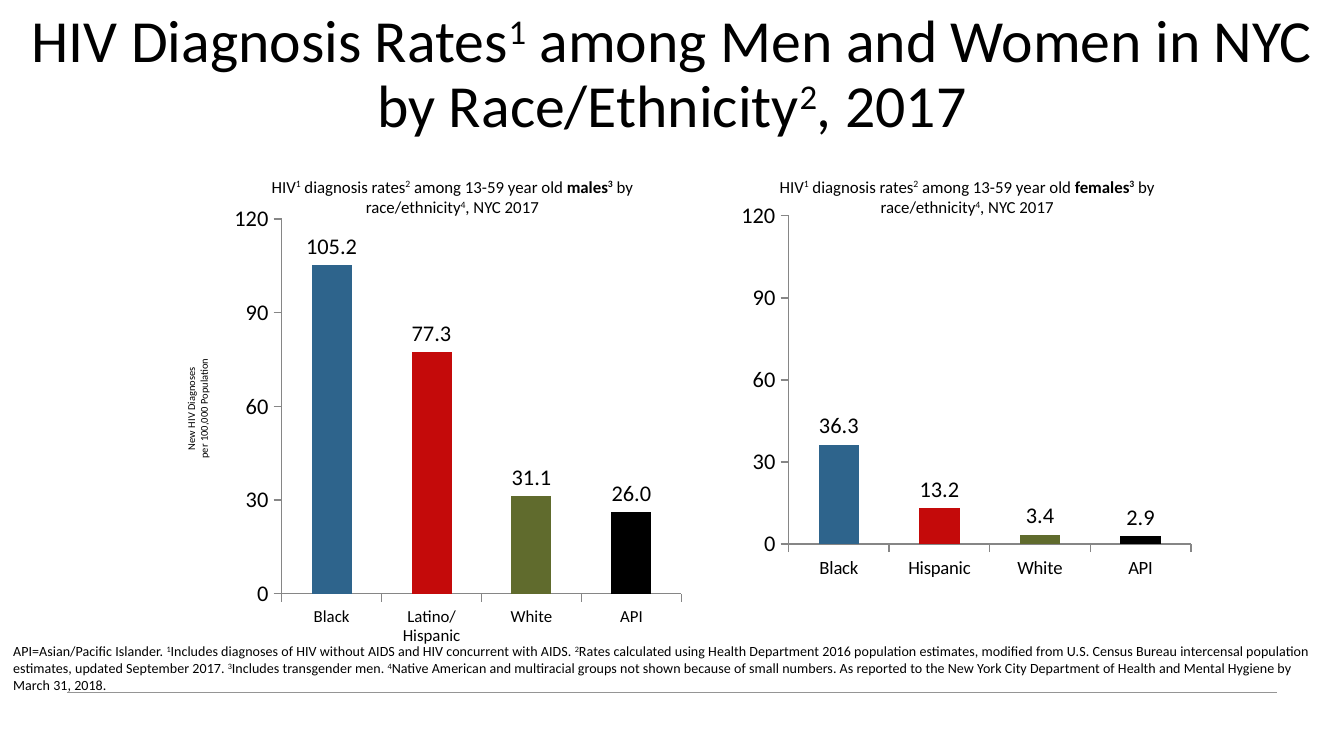
from dataclasses import dataclass

from lxml.etree import SubElement
from pptx import Presentation
from pptx.chart.data import CategoryChartData
from pptx.dml.color import RGBColor
from pptx.enum.chart import XL_CHART_TYPE as ChartType
from pptx.enum.chart import XL_LABEL_POSITION as LabelPos
from pptx.enum.chart import XL_TICK_MARK as Tick
from pptx.enum.shapes import MSO_CONNECTOR as Connector
from pptx.enum.text import MSO_ANCHOR as Anchor
from pptx.enum.text import PP_ALIGN as Align
from pptx.oxml import parse_xml
from pptx.oxml.ns import nsdecls, qn
from pptx.util import Pt

FONT = "Calibri"
BLACK = RGBColor(0x00, 0x00, 0x00)
RULE_GRAY = RGBColor(0x95, 0x95, 0x95)
AXIS_GRAY = RGBColor(0x86, 0x86, 0x86)
BAR_COLORS = (RGBColor(0x2E, 0x64, 0x8C), RGBColor(0xC4, 0x0A, 0x0A),
              RGBColor(0x60, 0x6B, 0x2D), BLACK)


@dataclass
class Run:
    text: str
    sup: bool = False
    bold: bool = False


@dataclass
class Box:
    left: float
    top: float
    width: float
    height: float

    def lengths(self) -> tuple:
        return Pt(self.left), Pt(self.top), Pt(self.width), Pt(self.height)


@dataclass
class Panel:
    group: str
    title_box: Box
    chart_box: Box
    plot: Box  # fractions of the chart box
    categories: tuple
    rates: tuple
    category_size: float


PANELS = (
    Panel("females", Box(392.4, 92.2, 251.3, 48.2), Box(392.4, 105.1, 250.6, 209.5),
          Box(0.12, 0.05, 0.86, 0.84), ("Black", "Hispanic", "White", "API"),
          (36.3, 13.2, 3.4, 2.9), 10),
    Panel("males", Box(118.8, 92.2, 247, 45.4), Box(121, 105.1, 249.1, 244.8),
          Box(0.12, 0.05, 0.86, 0.82), ("Black", "Latino/Hispanic", "White", "API"),
          (105.2, 77.3, 31.1, 26.0), 9),
)


def sup(text: str, bold: bool = False) -> Run:
    return Run(text, True, bold)


def set_font(font, size: float) -> None:
    font.name, font.size = FONT, Pt(size)
    font.color.rgb = BLACK


def fill_paragraph(p, runs: list, size: float, align=Align.LEFT) -> None:
    p.alignment = align
    set_font(p.font, size)
    for run in runs:
        r = p.add_run()
        r.text = run.text
        if run.bold:
            r.font.bold = True
        if run.sup:
            r._r.get_or_add_rPr().set("baseline", "30000")


def set_margins(tf, side: float, end: float) -> None:
    tf.margin_left = tf.margin_right = Pt(side)
    tf.margin_top = tf.margin_bottom = Pt(end)


def add_text(slide, box: Box, paragraphs: list, size: float, align=Align.LEFT,
             side: float = 7.2, end: float = 3.6):
    sp = slide.shapes.add_textbox(*box.lengths())
    tf = sp.text_frame
    tf.word_wrap = True
    set_margins(tf, side, end)
    for i, runs in enumerate(paragraphs):
        p = tf.add_paragraph() if i else tf.paragraphs[0]
        fill_paragraph(p, runs, size, align)
    return sp


def set_plot_layout(chart, plot: Box) -> None:
    area = chart._chartSpace.chart.plotArea
    for old in area.findall(qn("c:layout")):
        area.remove(old)
    layout = parse_xml(f"<c:layout {nsdecls('c')}><c:manualLayout/></c:layout>")
    values = (("layoutTarget", "inner"), ("xMode", "edge"), ("yMode", "edge"),
              ("x", plot.left), ("y", plot.top), ("w", plot.width), ("h", plot.height))
    for tag, value in values:
        SubElement(layout[0], qn(f"c:{tag}")).set("val", str(value))
    area.insert(0, layout)


def add_rate_chart(slide, panel: Panel) -> None:
    data = CategoryChartData(number_format="#,##0.0")
    data.categories = panel.categories
    data.add_series("Series 1", panel.rates)
    chart = slide.shapes.add_chart(ChartType.COLUMN_CLUSTERED,
                                   *panel.chart_box.lengths(), data).chart
    chart.has_legend = chart.has_title = False
    set_font(chart.font, 18)
    set_plot_layout(chart, panel.plot)

    # Axes
    value_axis = chart.value_axis
    value_axis.minimum_scale, value_axis.maximum_scale = 0, 120
    value_axis.major_unit = 30
    value_axis.has_major_gridlines = False
    value_axis.tick_labels.number_format = "General"
    value_axis.tick_labels.number_format_is_linked = False
    for axis, size in ((value_axis, 12), (chart.category_axis, panel.category_size)):
        axis.major_tick_mark = Tick.OUTSIDE
        axis.format.line.color.rgb = AXIS_GRAY
        axis.format.line.width = Pt(0.75)
        set_font(axis.tick_labels.font, size)

    # Bars and their values
    bars = chart.plots[0]
    bars.gap_width = 150
    bars.vary_by_categories = False
    for i, color in enumerate(BAR_COLORS):
        fill = bars.series[0].points[i].format.fill
        fill.solid()
        fill.fore_color.rgb = color
    bars.has_data_labels = True
    labels = bars.data_labels
    labels.show_value = True
    labels.number_format = "#,##0.0"
    labels.number_format_is_linked = False
    labels.position = LabelPos.OUTSIDE_END
    set_font(labels.font, 12)


def add_panel(slide, panel: Panel) -> None:
    add_rate_chart(slide, panel)
    heading = [Run("HIV"), sup("1"), Run(" diagnosis rates"), sup("2"),
               Run(" among 13-59 year old "), Run(panel.group, bold=True),
               sup("3", bold=True), Run(" by race/ethnicity"), sup("4"),
               Run(", NYC 2017")]
    add_text(slide, panel.title_box, [heading], 9, Align.CENTER, 4.3, 2.2)


def add_rule(slide) -> None:
    line = slide.shapes.add_connector(Connector.STRAIGHT, Pt(36), Pt(370.8),
                                      Pt(684), Pt(370.8))
    line.line.color.rgb = RULE_GRAY
    line.line.width = Pt(0.25)
    SubElement(line._element.spPr, qn("a:effectLst"))


def add_title(slide) -> None:
    sp = slide.shapes.title
    sp.left, sp.top, sp.width, sp.height = Box(0, 5, 720, 71.3).lengths()
    tf = sp.text_frame
    tf.word_wrap = True
    tf.vertical_anchor = Anchor.MIDDLE
    set_margins(tf, 5, 2.9)
    fill_paragraph(tf.paragraphs[0], [
        Run("HIV Diagnosis Rates"), sup("1"),
        Run(" among Men and Women in NYC by Race/Ethnicity"), sup("2"),
        Run(", 2017")], 32, Align.CENTER)
    tf.paragraphs[0].line_spacing = 0.9


def main() -> None:
    prs = Presentation()
    prs.slide_width, prs.slide_height = Pt(720), Pt(405)
    slide = prs.slides.add_slide(prs.slide_layouts[5])
    add_rule(slide)
    add_title(slide)
    for panel in PANELS:
        add_panel(slide, panel)

    # Shared value-axis caption, reading upwards
    caption = add_text(slide, Box(25.9, 205.9, 164.9, 25.9),
                       [[Run("New HIV Diagnoses")], [Run("per 100,000 Population")]],
                       5.6, Align.CENTER)
    caption.rotation = 270

    # Footnotes
    add_text(slide, Box(0, 340.6, 720, 34.6), [[
        Run("API=Asian/Pacific Islander. "), sup("1"),
        Run("Includes diagnoses of HIV without AIDS and HIV concurrent with AIDS. "),
        sup("2"),
        Run("Rates calculated using Health Department 2016 population estimates, "
            "modified from U.S. Census Bureau intercensal population estimates, "
            "updated September 2017. "),
        sup("3"), Run("Includes transgender men. "), sup("4"),
        Run("Native American and multiracial groups not shown because of small "
            "numbers. As reported to the New York City Department of Health and "
            "Mental Hygiene by March 31, 2018.")]], 7.5)
    prs.save("out.pptx")


if __name__ == "__main__":
    main()
